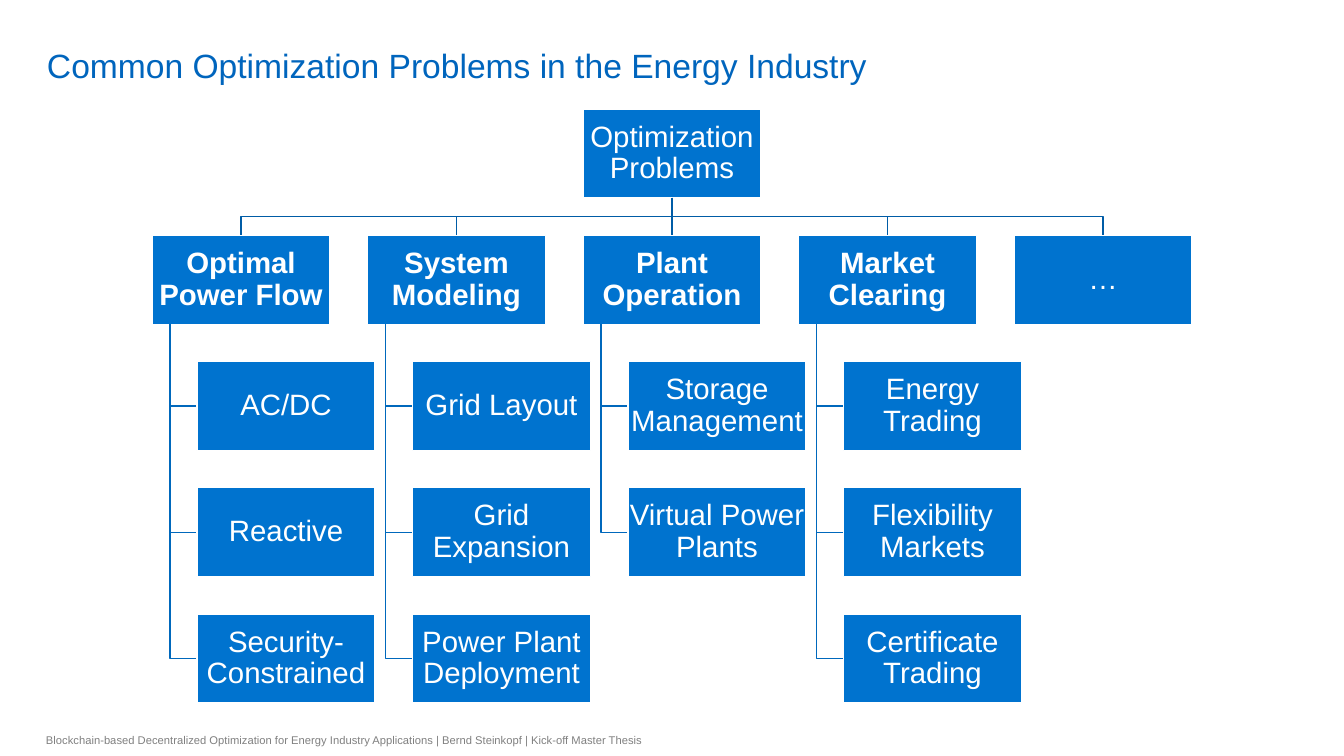
from lxml.etree import SubElement
from pptx import Presentation
from pptx.dml.color import RGBColor
from pptx.enum.shapes import MSO_CONNECTOR, MSO_SHAPE
from pptx.enum.text import MSO_ANCHOR, MSO_AUTO_SIZE, PP_ALIGN
from pptx.oxml.ns import qn
from pptx.util import Pt

TITLE = "Common Optimization Problems in the Energy Industry"
FOOTER = ("Blockchain-based Decentralized Optimization for Energy Industry Applications"
          " | Bernd Steinkopf | Kick-off Master Thesis")
ROOT = "Optimization Problems"
BRANCHES = [
    ("Optimal Power Flow", ["AC/DC", "Reactive", "Security-Constrained"]),
    ("System Modeling", ["Grid Layout", "Grid Expansion", "Power Plant Deployment"]),
    ("Plant Operation", ["Storage Management", "Virtual Power Plants"]),
    ("Market Clearing", ["Energy Trading", "Flexibility Markets", "Certificate Trading"]),
    ("…", []),
]
COLORS = {"title": "0065BD", "box": "0073CF", "white": "FFFFFF",
          "branch": "005CA6", "leaf": "0068BC", "footer": "808080"}
FONT = "Arial"

EMU_PER_PX = 914400 / 100.8
SLIDE_W, SLIDE_H = 1344, 756
BOX_W, BOX_H = 178, 89
TREE_TOP, TREE_H = 109, 505   # top of the first row to top of the last row
TREE_W = 862                  # centre of the first branch to centre of the last
ROW_STEP = TREE_H / 4
COL_STEP = TREE_W / (len(BRANCHES) - 1)
LEAF_INDENT, STEM_INDENT = 45, 18
LINE_W = Pt(0.85)


def px(n):
    return round(n * EMU_PER_PX)


def rgb(name):
    return RGBColor.from_string(COLORS[name])


def row_top(row):
    return TREE_TOP + row * ROW_STEP


def write(tf, text, size, color, bold=False, align=PP_ALIGN.LEFT,
          anchor=MSO_ANCHOR.MIDDLE, inset_x=10, inset_y=5):
    tf.word_wrap = True
    tf.auto_size = MSO_AUTO_SIZE.NONE
    tf.vertical_anchor = anchor
    tf.margin_left = tf.margin_right = px(inset_x)
    tf.margin_top = tf.margin_bottom = px(inset_y)
    p = tf.paragraphs[0]
    p.alignment = align
    r = p.add_run()
    r.text = text
    r.font.name = FONT
    r.font.size = Pt(size)
    r.font.bold = bold
    r.font.color.rgb = rgb(color)
    return p


def add_box(s, text, x, y, bold=False):
    sp = s.shapes.add_shape(MSO_SHAPE.RECTANGLE, px(x), px(y), px(BOX_W), px(BOX_H))
    sp.shadow.inherit = False
    sp.fill.solid()
    sp.fill.fore_color.rgb = rgb("box")
    sp.line.color.rgb = rgb("white")
    sp.line.width = LINE_W
    p = write(sp.text_frame, text, 21, "white", bold, PP_ALIGN.CENTER, inset_x=1, inset_y=1)
    p.line_spacing = 0.9


def add_link(s, points, color):
    """Draw a line through the points: a connector if straight, else an open outline."""
    pts = [(px(x), px(y)) for x, y in points]
    if len({x for x, _ in pts}) == 1:
        sp = s.shapes.add_connector(MSO_CONNECTOR.STRAIGHT, *pts[0], *pts[-1])
        SubElement(sp._element.spPr, qn("a:effectLst"))
    else:
        outline = s.shapes.build_freeform(*pts[0])
        outline.add_line_segments(pts[1:], close=False)
        sp = outline.convert_to_shape()
        sp.shadow.inherit = False
        sp.fill.background()
    sp.line.color.rgb = rgb(color)
    sp.line.width = LINE_W


def add_tree(s):
    mid = SLIDE_W / 2
    root_bottom = row_top(0) + BOX_H
    branch_top = row_top(1)
    bus_y = (root_bottom + branch_top) / 2
    add_box(s, ROOT, mid - BOX_W / 2, row_top(0))
    for col, (branch, leaves) in enumerate(BRANCHES):
        center = mid - TREE_W / 2 + col * COL_STEP
        left = center - BOX_W / 2
        add_link(s, [(mid, root_bottom), (mid, bus_y), (center, bus_y),
                     (center, branch_top)], "branch")
        add_box(s, branch, left, branch_top, bold=bool(leaves))
        stem_x, leaf_x = left + STEM_INDENT, left + LEAF_INDENT
        for row, leaf in enumerate(leaves, start=2):
            leaf_mid = row_top(row) + BOX_H / 2
            add_link(s, [(stem_x, branch_top + BOX_H), (stem_x, leaf_mid),
                         (leaf_x, leaf_mid)], "leaf")
            add_box(s, leaf, leaf_x, row_top(row))


def main():
    prs = Presentation()
    prs.slide_width, prs.slide_height = px(SLIDE_W), px(SLIDE_H)
    s = prs.slides.add_slide(prs.slide_layouts[5])
    title = s.shapes.title
    title.left, title.top, title.width, title.height = map(px, (37, 5, 1167, 80))
    write(title.text_frame, TITLE, 24, "title", anchor=MSO_ANCHOR.BOTTOM, inset_y=0)
    add_tree(s)
    footer = s.shapes.add_textbox(*map(px, (36, 724, 635, 32)))
    write(footer.text_frame, FOOTER, 8, "footer")
    prs.save("out.pptx")


if __name__ == "__main__":
    main()
